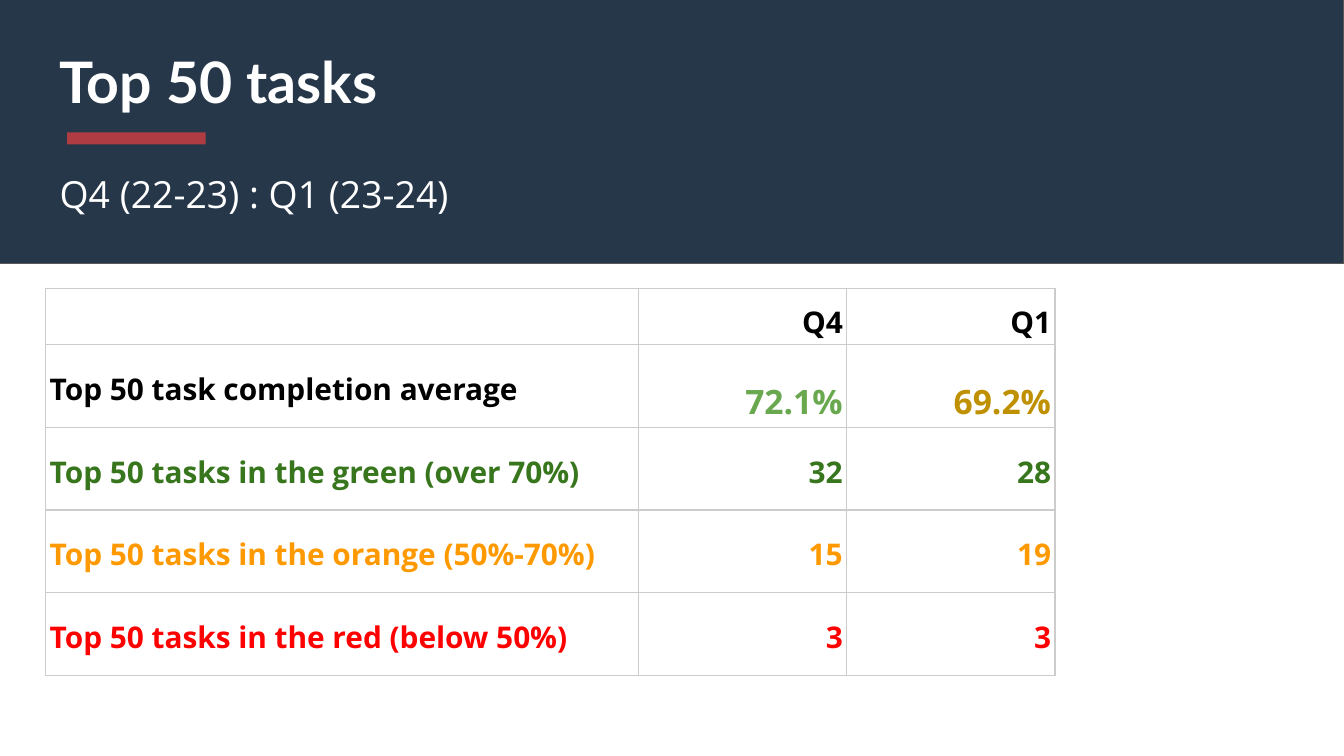
from dataclasses import dataclass

from lxml import etree
from pptx import Presentation
from pptx import util as u
from pptx.dml import color
from pptx.enum import shapes, text
from pptx.oxml import ns


@dataclass(frozen=True)
class Theme:
    heading_font: str = "Lato"
    body_font: str = "Open Sans"
    navy: str = "26374A"
    outline: str = "595959"
    accent: str = "AF3C43"
    white: str = "FFFFFF"
    black: str = "000000"
    light_green: str = "6AA84F"
    gold: str = "BF9000"
    green: str = "38761D"
    orange: str = "FF9900"
    red: str = "FF0000"
    grid: str = "CCCCCC"
    title_size: float = 30.6
    subtitle_size: int = 20
    average_size: int = 18
    cell_size: int = 16
    line_width: float = 0.75
    line_spacing: float = 1.15


THEME = Theme()
PX = u.Inches(1) // 200
SLIDE = (2000, 1125)

BAND = (-10, -2, 2010, 394)
ACCENT_BAR = (100, 197, 206, 18)
HEADINGS = [
    ("Top 50 tasks", (69, 49, 1534, 210), THEME.heading_font, THEME.title_size, True),
    ("Q4 (22-23) : Q1 (23-24)", (69, 235, 1542, 100), THEME.body_font, THEME.subtitle_size, False),
]
HEADING_INSET = 20

TABLE_ORIGIN = (68, 429)
COLUMN_WIDTHS = [882, 310, 310]
ROW_HEIGHTS = [84] + [123] * 4
CELL_INSETS = (6, 4)
BOTTOM, MIDDLE = text.MSO_ANCHOR.BOTTOM, text.MSO_ANCHOR.MIDDLE
ROWS = [
    (["", "Q4", "Q1"], [THEME.black] * 3, THEME.cell_size, BOTTOM),
    (["Top 50 task completion average", "72.1%", "69.2%"],
     [THEME.black, THEME.light_green, THEME.gold], THEME.average_size, BOTTOM),
    (["Top 50 tasks in the green (over 70%)", "32", "28"],
     [THEME.green] * 3, THEME.cell_size, MIDDLE),
    (["Top 50 tasks in the orange (50%-70%)", "15", "19"],
     [THEME.orange] * 3, THEME.cell_size, MIDDLE),
    (["Top 50 tasks in the red (below 50%)", "3", "3"],
     [THEME.red] * 3, THEME.cell_size, MIDDLE),
]


def px(*lengths):
    return [u.Emu(length * PX) for length in lengths]


def rgb(value):
    return color.RGBColor.from_string(value)


def style_font(font, name, size, colour, bold):
    font.name, font.size, font.bold = name, u.Pt(size), bold
    font.color.rgb = rgb(colour)


def add_rectangle(slide, box, fill, outline=None):
    shape = slide.shapes.add_shape(shapes.MSO_SHAPE.RECTANGLE, *px(*box))
    shape.shadow.inherit = False
    shape.fill.solid()
    shape.fill.fore_color.rgb = rgb(fill)
    if outline:
        shape.line.color.rgb = rgb(outline)
        shape.line.width = u.Pt(THEME.line_width)
    else:
        shape.line.fill.background()


def add_heading(slide, wording, box, font_name, size, bold):
    frame = slide.shapes.add_textbox(*px(*box)).text_frame
    frame.word_wrap = True
    frame.margin_left = frame.margin_right = frame.margin_top = frame.margin_bottom = px(HEADING_INSET)[0]
    paragraph = frame.paragraphs[0]
    paragraph.text = wording
    style_font(paragraph.font, font_name, size, THEME.white, bold)


def add_borders(cell):
    properties = cell._tc.get_or_add_tcPr()
    for position, side in enumerate(("lnL", "lnR", "lnT", "lnB")):
        line = etree.Element(ns.qn(f"a:{side}"), w=str(u.Pt(THEME.line_width)))
        fill = etree.SubElement(line, ns.qn("a:solidFill"))
        etree.SubElement(fill, ns.qn("a:srgbClr"), val=THEME.grid)
        properties.insert(position, line)


def fill_cell(cell, wording, colour, size, anchor, alignment):
    cell.fill.background()
    cell.vertical_anchor = anchor
    horizontal, vertical = px(*CELL_INSETS)
    cell.margin_left = cell.margin_right = horizontal
    cell.margin_top = cell.margin_bottom = vertical
    paragraph = cell.text_frame.paragraphs[0]
    paragraph.text = wording
    paragraph.alignment = alignment
    paragraph.line_spacing = THEME.line_spacing
    style_font(paragraph.font, THEME.body_font, size, colour, True)
    add_borders(cell)


def add_task_table(slide):
    size = (sum(COLUMN_WIDTHS), sum(ROW_HEIGHTS))
    table = slide.shapes.add_table(len(ROWS), len(COLUMN_WIDTHS), *px(*TABLE_ORIGIN, *size)).table
    table.first_row = table.horz_banding = False
    for column, width in zip(table.columns, px(*COLUMN_WIDTHS)):
        column.width = width
    for row, height in zip(table.rows, px(*ROW_HEIGHTS)):
        row.height = height
    for row, (wordings, colours, value_size, value_anchor) in zip(table.rows, ROWS):
        for index, (cell, wording, colour) in enumerate(zip(row.cells, wordings, colours)):
            if index == 0:
                fill_cell(cell, wording, colour, THEME.cell_size, MIDDLE, text.PP_ALIGN.LEFT)
            else:
                fill_cell(cell, wording, colour, value_size, value_anchor, text.PP_ALIGN.RIGHT)


def main():
    presentation = Presentation()
    presentation.slide_width, presentation.slide_height = px(*SLIDE)
    slide = presentation.slides.add_slide(presentation.slide_layouts[6])
    add_rectangle(slide, BAND, THEME.navy, THEME.outline)
    add_rectangle(slide, ACCENT_BAR, THEME.accent)
    for heading in HEADINGS:
        add_heading(slide, *heading)
    add_task_table(slide)
    presentation.save("out.pptx")


if __name__ == "__main__":
    main()
